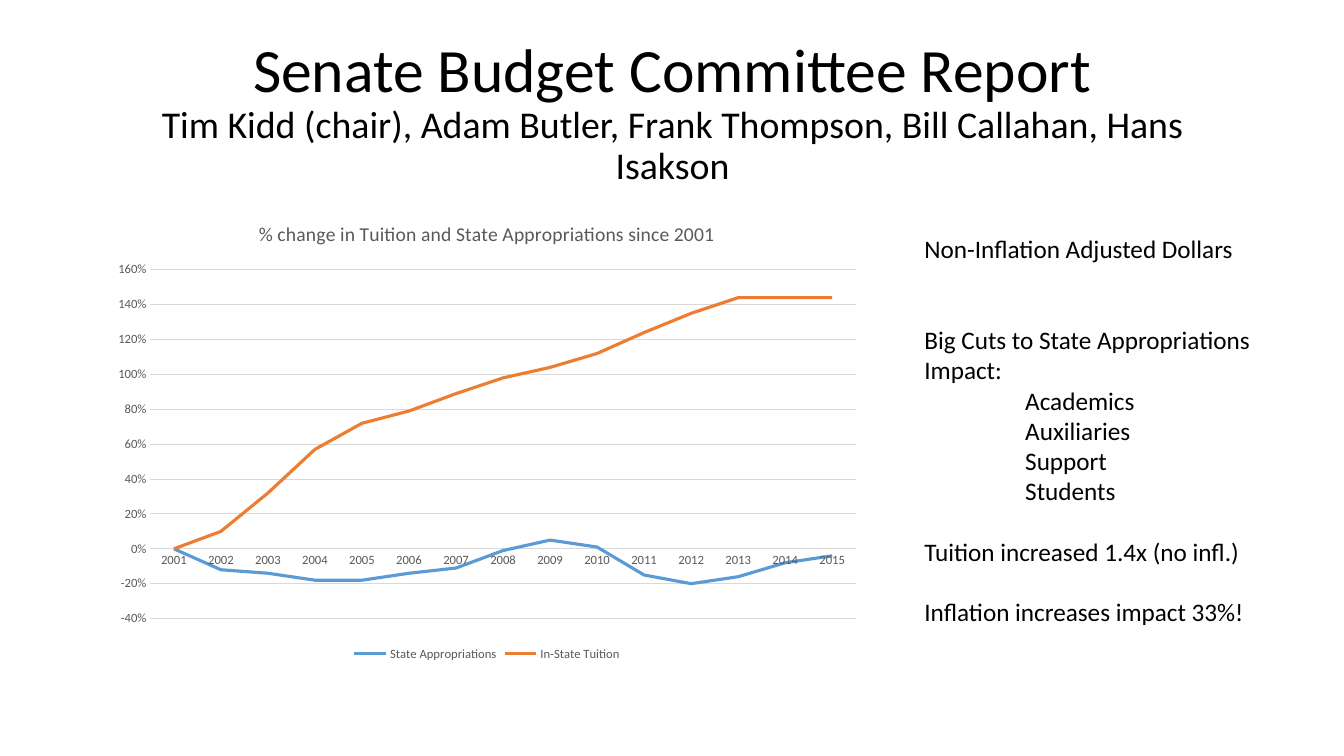
from dataclasses import dataclass

from pptx import Presentation
from pptx.chart.data import CategoryChartData
from pptx.dml.color import RGBColor
from pptx.enum.chart import XL_CHART_TYPE, XL_LEGEND_POSITION, XL_MARKER_STYLE, XL_TICK_MARK
from pptx.enum.text import MSO_ANCHOR, MSO_AUTO_SIZE, PP_ALIGN
from pptx.util import Inches, Pt

LINE = XL_CHART_TYPE.LINE
BOTTOM = XL_LEGEND_POSITION.BOTTOM
NO_MARK = XL_MARKER_STYLE.NONE
NO_TICK = XL_TICK_MARK.NONE
MIDDLE = MSO_ANCHOR.MIDDLE
GROW = MSO_AUTO_SIZE.SHAPE_TO_FIT_TEXT
NO_FIT = MSO_AUTO_SIZE.NONE
CENTER = PP_ALIGN.CENTER
LEFT = PP_ALIGN.LEFT


@dataclass(frozen=True)
class Theme:
    face: str = "Calibri"
    ink: str = "000000"
    gray: str = "595959"
    grid: str = "D9D9D9"
    blue: str = "5B9BD5"
    orange: str = "ED7D31"
    head: float = 44
    names: float = 27
    body: float = 18
    chart: float = 14
    label: float = 9


THEME = Theme()
HEAD = "Senate Budget Committee Report"
NAMES = "Tim Kidd (chair), Adam Butler, Frank Thompson, Bill Callahan, Hans Isakson"
CHART = "% change in Tuition and State Appropriations since 2001"
YEARS = [str(year) for year in range(2001, 2016)]
SERIES = [
    ("State Appropriations", THEME.blue,
     [0, -0.12, -0.14, -0.18, -0.18, -0.14, -0.11, -0.01,
      0.05, 0.01, -0.15, -0.2, -0.16, -0.08, -0.04]),
    ("In-State Tuition", THEME.orange,
     [0, 0.1, 0.32, 0.57, 0.72, 0.79, 0.89, 0.98,
      1.04, 1.12, 1.24, 1.35, 1.44, 1.44, 1.44]),
]
# Text, indent in inches, lines of space above
NOTES = [
    ("Non-Inflation Adjusted Dollars", 0, 0),
    ("Big Cuts to State Appropriations", 0, 2),
    ("Impact:", 0, 0),
    ("Academics", 1, 0),
    ("Auxiliaries", 1, 0),
    ("Support", 1, 0),
    ("Students", 1, 0),
    ("Tuition increased 1.4x (no infl.)", 0, 1),
    ("Inflation increases impact 33%!", 0, 1),
]


def apply(item, values):
    for name, value in values.items():
        setattr(item, name, value)


def style(font, size, color):
    apply(font, {"name": THEME.face, "size": Pt(size), "bold": False})
    font.color.rgb = RGBColor.from_string(color)


def stroke(line, color, width):
    line.color.rgb = RGBColor.from_string(color)
    line.width = Pt(width)


def place(shape, box):
    apply(shape, dict(zip(("left", "top", "width", "height"), map(Inches, box))))


def add_head(slide, box):
    title = slide.shapes.title
    place(title, box)
    frame = title.text_frame
    apply(frame, {"vertical_anchor": MIDDLE, "word_wrap": True, "auto_size": NO_FIT})
    para = frame.paragraphs[0]
    apply(para, {"alignment": CENTER, "line_spacing": 0.9})
    run = para.add_run()
    run.text = HEAD
    style(run.font, THEME.head, THEME.ink)
    para.add_line_break()
    run = para.add_run()
    run.text = NAMES
    style(run.font, THEME.names, THEME.ink)


def add_trend(slide, box):
    """Chart tuition against state funding."""
    data = CategoryChartData(number_format="0%")
    data.categories = YEARS
    for name, _, values in SERIES:
        data.add_series(name, values)
    chart = slide.shapes.add_chart(LINE, *map(Inches, box), data).chart
    style(chart.font, THEME.label, THEME.gray)

    chart.has_title = True
    frame = chart.chart_title.text_frame
    frame.text = CHART
    style(frame.paragraphs[0].runs[0].font, THEME.chart, THEME.gray)
    chart.chart_title.include_in_layout = False

    chart.has_legend = True
    apply(chart.legend, {"position": BOTTOM, "include_in_layout": False})
    style(chart.legend.font, THEME.label, THEME.gray)

    years, rates = chart.category_axis, chart.value_axis
    for axis in (years, rates):
        apply(axis, {"major_tick_mark": NO_TICK, "minor_tick_mark": NO_TICK})
        style(axis.tick_labels.font, THEME.label, THEME.gray)
    stroke(years.format.line, THEME.grid, 0.75)
    apply(rates, {"minimum_scale": -0.4, "maximum_scale": 1.6,
                  "major_unit": 0.2, "has_major_gridlines": True})
    apply(rates.tick_labels, {"number_format": "0%", "number_format_is_linked": False})
    rates.format.line.fill.background()
    stroke(rates.major_gridlines.format.line, THEME.grid, 0.75)

    chart.plots[0].vary_by_categories = False
    for series, (_, color, _) in zip(chart.plots[0].series, SERIES):
        series.smooth = False
        series.marker.style = NO_MARK
        stroke(series.format.line, color, 2.25)


def add_notes(slide, box):
    frame = slide.shapes.add_textbox(*map(Inches, box)).text_frame
    apply(frame, {"word_wrap": False, "auto_size": GROW})
    for index, (text, indent, gap) in enumerate(NOTES):
        para = frame.add_paragraph() if index else frame.paragraphs[0]
        apply(para, {"alignment": LEFT, "space_before": Pt(gap * THEME.body * 1.2)})
        para._p.get_or_add_pPr().set("marL", str(Inches(indent)))
        run = para.add_run()
        run.text = text
        style(run.font, THEME.body, THEME.ink)


def main():
    deck = Presentation()
    apply(deck, {"slide_width": Inches(13.33), "slide_height": Inches(7.5)})
    slide = deck.slides.add_slide(deck.slide_layouts[5])
    add_head(slide, (0.92, 0.4, 11.5, 1.45))
    add_trend(slide, (1.02, 2.01, 7.62, 4.59))
    add_notes(slide, (9.07, 2.27, 3.47, 4.04))
    deck.save("out.pptx")


if __name__ == "__main__":
    main()
